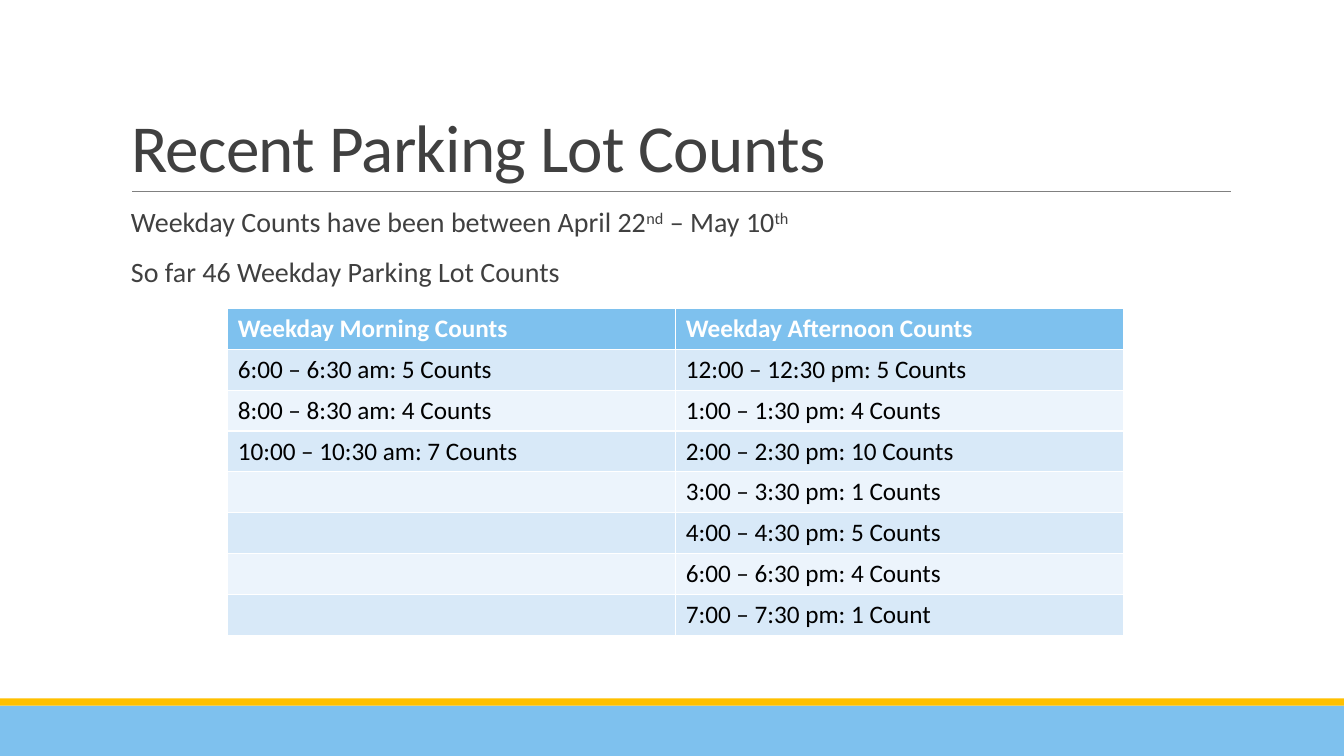
"""Build the slide of recent parking lot counts."""
from itertools import zip_longest

from pptx import Presentation
from pptx.dml.color import RGBColor
from pptx.enum.shapes import MSO_CONNECTOR, MSO_SHAPE
from pptx.enum.text import MSO_ANCHOR, MSO_AUTO_SIZE, PP_ALIGN
from pptx.oxml.ns import qn
from pptx.util import Cm, Pt

COLORS = {"blue": "7EC1EE", "gold": "FFC000", "rule": "808080", "text": "404040",
          "odd": "D8E9F8", "even": "ECF4FC", "white": "FFFFFF", "black": "000000"}
MORNING = ["Weekday Morning Counts", "6:00 – 6:30 am: 5 Counts",
           "8:00 – 8:30 am: 4 Counts", "10:00 – 10:30 am: 7 Counts"]
AFTERNOON = ["Weekday Afternoon Counts", "12:00 – 12:30 pm: 5 Counts",
             "1:00 – 1:30 pm: 4 Counts", "2:00 – 2:30 pm: 10 Counts",
             "3:00 – 3:30 pm: 1 Counts", "4:00 – 4:30 pm: 5 Counts",
             "6:00 – 6:30 pm: 4 Counts", "7:00 – 7:30 pm: 1 Count"]
INTRO = [[("Weekday Counts have been between April 22", False), ("nd", True),
          (" – May 10", False), ("th", True)],
         [("So far 46 Weekday Parking Lot Counts", False)]]


def rgb(name):
    return RGBColor.from_string(COLORS[name])


def add_text(p, text, size, color, bold=False):
    r = p.add_run()
    r.text = text
    for key, value in {"name": "Calibri", "size": Pt(size), "bold": bold}.items():
        setattr(r.font, key, value)
    r.font.color.rgb = rgb(color)
    return r


prs = Presentation()
prs.slide_width, prs.slide_height = Cm(33.87), Cm(19.05)
s = prs.slides.add_slide(prs.slide_layouts[5])

for top, height, color in [(17.78, 1.27, "blue"), (17.6, 0.18, "gold")]:
    band = s.shapes.add_shape(MSO_SHAPE.RECTANGLE, 0, Cm(top), prs.slide_width, Cm(height))
    band.shadow.inherit = False
    band.fill.solid()
    band.fill.fore_color.rgb = rgb(color)
    band.line.fill.background()

rule = s.shapes.add_connector(MSO_CONNECTOR.STRAIGHT, Cm(3.33), Cm(4.83), Cm(31.01), Cm(4.83))
rule.line.color.rgb = rgb("rule")
rule.line.width = Pt(0.5)
rule._element.spPr.add_effectLst() if hasattr(rule._element.spPr, "add_effectLst") else \
    rule._element.spPr.append(rule._element.spPr.makeelement(qn("a:effectLst"), {}))

title = s.shapes.title
frame = {"left": Cm(3.05), "top": Cm(0.79), "width": Cm(27.94), "height": Cm(4.04)}
for key, value in frame.items():
    setattr(title, key, value)
tf = title.text_frame
tf.auto_size = MSO_AUTO_SIZE.NONE
tf.vertical_anchor = MSO_ANCHOR.BOTTOM
p = tf.paragraphs[0]
p.alignment = PP_ALIGN.LEFT
p.line_spacing = 0.85
r = add_text(p, "Recent Parking Lot Counts", 48, "text")
r.font._element.set("spc", "-50")

intro = s.shapes.add_textbox(Cm(3.05), Cm(5.13), Cm(27.94), Cm(11.18))
tf = intro.text_frame
tf.word_wrap = True
for i, runs in enumerate(INTRO):
    p = tf.add_paragraph() if i else tf.paragraphs[0]
    spacing = {"line_spacing": 0.9, "space_before": Pt(12), "space_after": Pt(2)}
    for key, value in spacing.items():
        setattr(p, key, value)
    for text, raised in runs:
        r = add_text(p, text, 20, "text")
        if raised:
            r.font._element.set("baseline", "30000")

rows = list(zip_longest(MORNING, AFTERNOON, fillvalue=""))
table = s.shapes.add_table(len(rows), 2, Cm(5.74), Cm(7.77), Cm(22.58), Cm(8.24)).table
for i, row in enumerate(rows):
    fill = "blue" if i == 0 else "odd" if i % 2 else "even"
    for j, text in enumerate(row):
        cell = table.cell(i, j)
        cell.fill.solid()
        cell.fill.fore_color.rgb = rgb(fill)
        if text:
            add_text(cell.text_frame.paragraphs[0], text, 18,
                     "black" if i else "white", i == 0)

prs.save("out.pptx")
